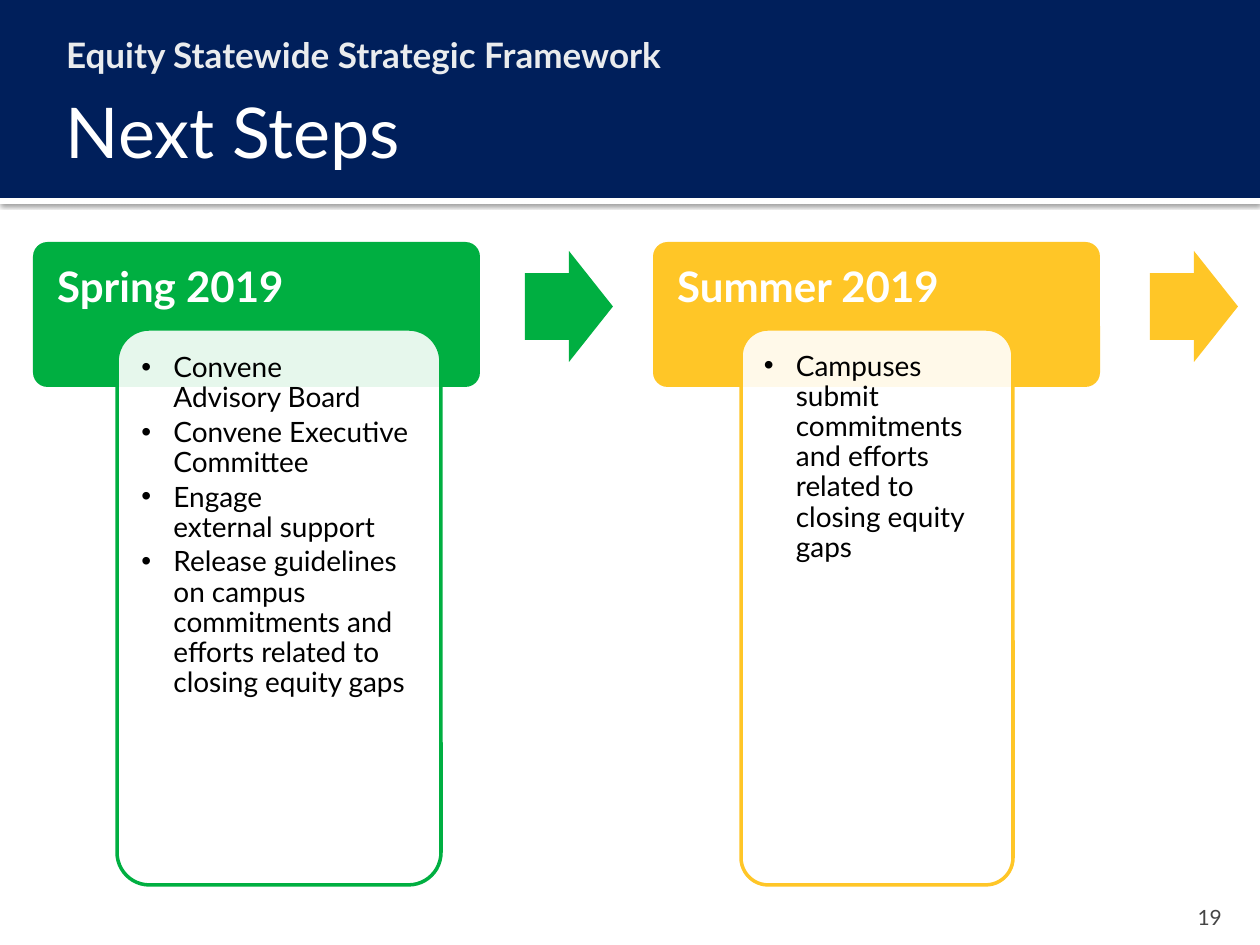
from dataclasses import dataclass

from lxml.etree import SubElement
from pptx import Presentation
from pptx.dml.color import RGBColor
from pptx.enum.shapes import MSO_SHAPE
from pptx.enum.text import MSO_ANCHOR, MSO_AUTO_SIZE, PP_ALIGN
from pptx.oxml.ns import qn
from pptx.util import Emu, Pt


@dataclass(frozen=True)
class Theme:
    font: str = "Lato"
    navy: str = "001F5B"
    white: str = "FFFFFF"
    pale: str = "EAECEE"
    grey: str = "454545"
    black: str = "000000"
    green: str = "00AF41"
    gold: str = "FFC627"
    title: int = 40
    heading: int = 24
    subtitle: int = 20
    body: int = 16
    number: int = 12


T = Theme()
EMU_PER_PX = 914400 / 126
W, H = 1260, 945

# Card offset and width, and arrow offset, are measured from the stage's left
STAGES = [
    dict(x=33, color=T.green, heading="Spring 2019", card_dx=84, card_w=324, arrow_dx=492,
         items=["Convene\vAdvisory Board",
                "Convene Executive Committee",
                "Engage\vexternal support",
                "Release guidelines on campus commitments and efforts "
                "related to closing equity gaps"]),
    dict(x=653, color=T.gold, heading="Summer 2019", card_dx=88, card_w=272, arrow_dx=497,
         items=["Campuses submit commitments and efforts related to closing equity gaps"]),
]


def px(n):
    return Emu(round(n * EMU_PER_PX))


def rgb(color):
    return RGBColor.from_string(color)


def add_block(slide, kind, box, fill, adj=(), line=None):
    sp = slide.shapes.add_shape(kind, *map(px, box))
    sp.shadow.inherit = False
    sp.fill.solid()
    sp.fill.fore_color.rgb = rgb(fill)
    if line:
        sp.line.color.rgb = rgb(line)
        sp.line.width = Pt(2)
    else:
        sp.line.fill.background()
    for i, value in enumerate(adj):
        sp.adjustments[i] = value
    return sp


def write(sp, lines, size, color, insets, bold=False, align=PP_ALIGN.LEFT,
          anchor=MSO_ANCHOR.TOP, spacing=None, after=0):
    tf = sp.text_frame
    tf.word_wrap = True
    tf.auto_size = MSO_AUTO_SIZE.NONE
    tf.vertical_anchor = anchor
    tf.margin_left, tf.margin_top, tf.margin_right, tf.margin_bottom = map(px, insets)
    for i, line in enumerate(lines):
        p = tf.add_paragraph() if i else tf.paragraphs[0]
        p.text = line
        p.alignment = align
        p.line_spacing = spacing
        p.space_after = Pt(after)
        for r in p.runs:
            r.font.name = T.font
            r.font.size = Pt(size)
            r.font.bold = bold
            r.font.color.rgb = rgb(color)
    return tf


def add_bullet(p, indent):
    pPr = p._p.get_or_add_pPr()
    pPr.set("marL", str(px(indent)))
    pPr.set("indent", str(-px(indent)))
    SubElement(pPr, qn("a:buFont"), typeface="Arial")
    SubElement(pPr, qn("a:buChar"), char="•")


def set_alpha(sp, percent):
    clr = sp._element.spPr.find(qn("a:solidFill"))[0]
    SubElement(clr, qn("a:alpha"), val=str(percent * 1000))


def add_drop_shadow(sp):
    effects = sp._element.spPr.find(qn("a:effectLst"))
    shadow = SubElement(effects, qn("a:outerShdw"), blurRad=str(Pt(2.5)), dist=str(Pt(0.8)),
                        dir="5400000", algn="t", rotWithShape="0")
    clr = SubElement(shadow, qn("a:srgbClr"), val=T.black)
    SubElement(clr, qn("a:alpha"), val="60000")


def header(slide, x, y, w, h):
    # White rule with a shadow below the navy band
    add_drop_shadow(add_block(slide, MSO_SHAPE.RECTANGLE, (x, y + h, w, 6), T.white))
    add_block(slide, MSO_SHAPE.RECTANGLE, (x, y, w, h), T.navy)

    # Subtitle
    sub = slide.shapes.add_textbox(px(x + 42), px(y + 21), px(w - 83), px(63))
    write(sub, ["Equity Statewide Strategic Framework"], T.subtitle, T.pale,
          (24, 13, 13, 6), bold=True)

    # Title, raised above the band
    title = slide.shapes.title
    title.left, title.top, title.width, title.height = map(px, (x + 53, y + 73, w - 105, 116))
    write(title, ["Next Steps"], T.title, T.white, (13, 6, 6, 6), anchor=MSO_ANCHOR.MIDDLE)
    slide.shapes._spTree.append(title._element)


def stage(slide, x, y, color, heading, card_dx, card_w, arrow_dx, items):
    # Heading block
    block = add_block(slide, MSO_SHAPE.ROUNDED_RECTANGLE, (x, y, 447, 145), color, [0.1])
    write(block, [heading], T.heading, T.white, (20, 20, 20, 13), bold=True, spacing=0.9)

    # Translucent card with the bullets
    card = add_block(slide, MSO_SHAPE.ROUNDED_RECTANGLE,
                     (x + card_dx, y + 87, card_w, 556), T.white, [0.1], line=color)
    set_alpha(card, 90)
    tf = write(card, items, T.body, T.black, (15, 15, 15, 15), spacing=0.9, after=2.5)
    for p in tf.paragraphs:
        add_bullet(p, 32)

    # Arrow to the next stage
    add_block(slide, MSO_SHAPE.RIGHT_ARROW, (x + arrow_dx, y + 9, 88, 111), color, [0.6, 0.5])


def page_number(slide, x, y, w, h):
    box = slide.shapes.add_textbox(*map(px, (x, y, w, h)))
    write(box, ["19"], T.number, T.grey, (13, 6, 13, 0),
          align=PP_ALIGN.RIGHT, anchor=MSO_ANCHOR.BOTTOM)


def main():
    prs = Presentation()
    prs.slide_width, prs.slide_height = px(W), px(H)
    slide = prs.slides.add_slide(prs.slide_layouts[5])
    header(slide, 0, 0, W, 198)
    for parts in STAGES:
        stage(slide, y=242, **parts)
    page_number(slide, 1134, 892, 101, 38)
    prs.save("out.pptx")


if __name__ == "__main__":
    main()
